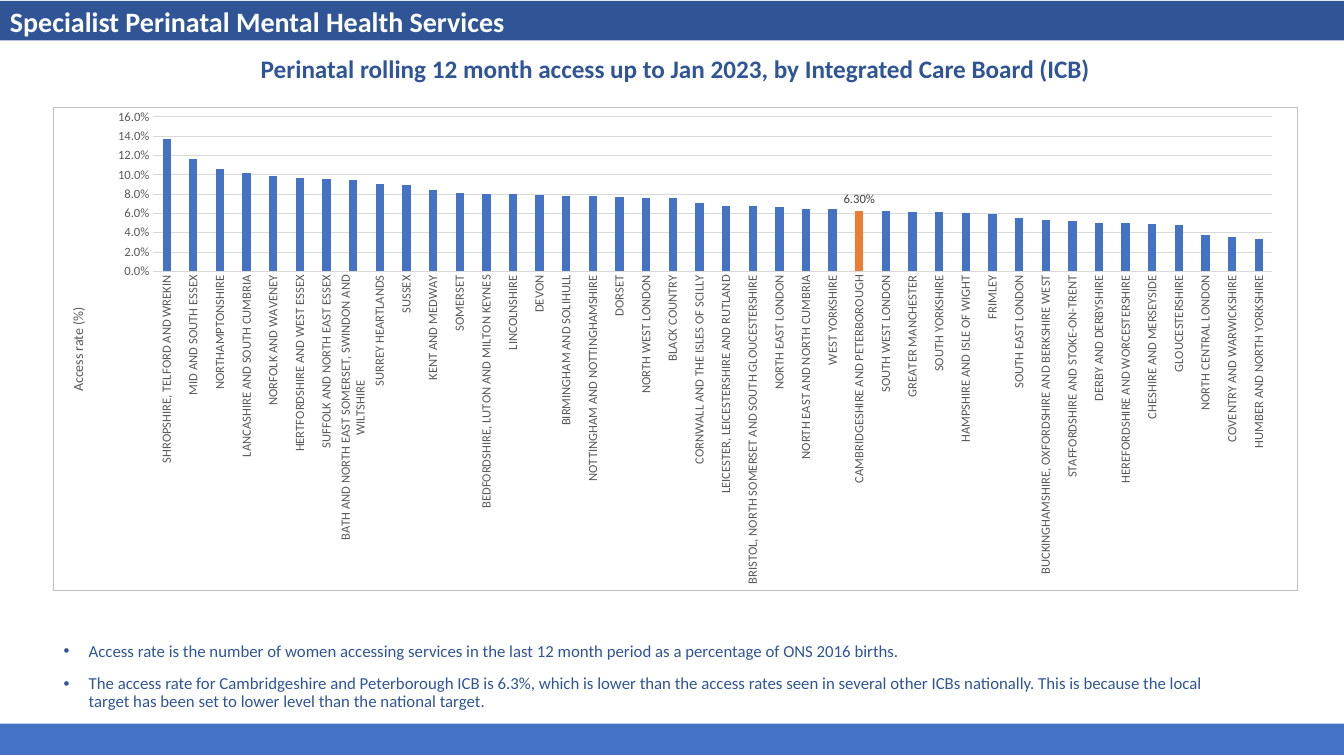
from lxml import etree
from pptx import Presentation
from pptx import util as u
from pptx.chart.data import CategoryChartData
from pptx.dml.color import RGBColor
from pptx.enum import chart as ch, shapes, text
from pptx.oxml import parse_xml
from pptx.oxml.ns import nsdecls, qn

W, H = 13.33, 7.5
MARGIN = 0.53
FONT = "Calibri"
COLORS = {"navy": "2F5597", "blue": "4472C4", "orange": "ED7D31", "white": "FFFFFF",
          "grey": "595959", "grid": "D9D9D9", "border": "BFBFBF", "dark": "404040"}
HIGHLIGHT = "CAMBRIDGESHIRE AND PETERBOROUGH"
ACCESS_RATES = [
    ("SHROPSHIRE, TELFORD AND WREKIN", 0.137), ("MID AND SOUTH ESSEX", 0.116),
    ("NORTHAMPTONSHIRE", 0.106), ("LANCASHIRE AND SOUTH CUMBRIA", 0.102),
    ("NORFOLK AND WAVENEY", 0.099), ("HERTFORDSHIRE AND WEST ESSEX", 0.097),
    ("SUFFOLK AND NORTH EAST ESSEX", 0.096),
    ("BATH AND NORTH EAST SOMERSET, SWINDON AND\nWILTSHIRE", 0.095),
    ("SURREY HEARTLANDS", 0.091), ("SUSSEX", 0.09), ("KENT AND MEDWAY", 0.084),
    ("SOMERSET", 0.081), ("BEDFORDSHIRE, LUTON AND MILTON KEYNES", 0.08),
    ("LINCOLNSHIRE", 0.08), ("DEVON", 0.079), ("BIRMINGHAM AND SOLIHULL", 0.078),
    ("NOTTINGHAM AND NOTTINGHAMSHIRE", 0.078), ("DORSET", 0.077),
    ("NORTH WEST LONDON", 0.076), ("BLACK COUNTRY", 0.076),
    ("CORNWALL AND THE ISLES OF SCILLY", 0.071),
    ("LEICESTER, LEICESTERSHIRE AND RUTLAND", 0.068),
    ("BRISTOL, NORTH SOMERSET AND SOUTH GLOUCESTERSHIRE", 0.068),
    ("NORTH EAST LONDON", 0.067), ("NORTH EAST AND NORTH CUMBRIA", 0.065),
    ("WEST YORKSHIRE", 0.065), (HIGHLIGHT, 0.063), ("SOUTH WEST LONDON", 0.063),
    ("GREATER MANCHESTER", 0.062), ("SOUTH YORKSHIRE", 0.062),
    ("HAMPSHIRE AND ISLE OF WIGHT", 0.061), ("FRIMLEY", 0.06),
    ("SOUTH EAST LONDON", 0.055),
    ("BUCKINGHAMSHIRE, OXFORDSHIRE AND BERKSHIRE WEST", 0.053),
    ("STAFFORDSHIRE AND STOKE-ON-TRENT", 0.052), ("DERBY AND DERBYSHIRE", 0.05),
    ("HEREFORDSHIRE AND WORCESTERSHIRE", 0.05), ("CHESHIRE AND MERSEYSIDE", 0.049),
    ("GLOUCESTERSHIRE", 0.048), ("NORTH CENTRAL LONDON", 0.038),
    ("COVENTRY AND WARWICKSHIRE", 0.036), ("HUMBER AND NORTH YORKSHIRE", 0.034)]
NOTES = [
    "Access rate is the number of women accessing services in the last 12 month period "
    "as a percentage of ONS 2016 births.",
    "The access rate for Cambridgeshire and Peterborough ICB is 6.3%, which is lower than "
    "the access rates seen in several other ICBs nationally. This is because the local "
    "target has been set to lower level than the national target."]


def rgb(name):
    return RGBColor.from_string(COLORS[name])


def inches(box):
    return [u.Inches(v) for v in box]


def style_font(font, size, color, bold=False):
    font.name, font.size, font.bold = FONT, u.Pt(size), bold
    font.color.rgb = rgb(color)


def style_line(line, color):
    line.color.rgb = rgb(color)
    line.width = u.Pt(0.75)


def add_run(p, content, size, color, bold=False):
    r = p.add_run()
    r.text = content
    style_font(r.font, size, color, bold)


def place(sp, box):
    sp.left, sp.top, sp.width, sp.height = inches(box)


def add_band(s, box, color):
    sp = s.shapes.add_shape(shapes.MSO_SHAPE.RECTANGLE, *inches(box))
    sp.shadow.inherit = False
    sp.fill.solid()
    sp.fill.fore_color.rgb = rgb(color)
    sp.line.fill.background()


def add_heading(s, box):
    tf = s.shapes.add_textbox(*inches(box)).text_frame
    tf.word_wrap = False
    add_run(tf.paragraphs[0], "Specialist Perinatal Mental Health Services", 20, "white", True)


def fill_title(s, box):
    sp = s.shapes.title
    place(sp, box)
    tf = sp.text_frame
    tf.auto_size = text.MSO_AUTO_SIZE.NONE
    tf.vertical_anchor = text.MSO_ANCHOR.MIDDLE
    p = tf.paragraphs[0]
    p.alignment, p.line_spacing = text.PP_ALIGN.CENTER, 0.9
    add_run(p, "Perinatal rolling 12 month access up to Jan 2023, by Integrated Care Board (ICB)",
            18, "navy", True)


def fill_notes(s, box):
    sp = s.placeholders[1]
    place(sp, box)
    tf = sp.text_frame
    tf.auto_size = text.MSO_AUTO_SIZE.NONE
    for i, note in enumerate(NOTES):
        p = tf.add_paragraph() if i else tf.paragraphs[0]
        p.line_spacing, p.space_before = 0.9, u.Pt(10)
        pPr = p._p.get_or_add_pPr()
        pPr.set("marL", str(u.Inches(0.25)))
        pPr.set("indent", str(-u.Inches(0.25)))
        etree.SubElement(pPr, qn("a:buFont"), typeface="Arial")
        etree.SubElement(pPr, qn("a:buChar"), char="•")
        add_run(p, note, 12, "navy")


def layout_xml(inner=False, **shares):
    target = '<c:layoutTarget val="inner"/>' if inner else ""
    modes = "".join(f'<c:{k}Mode val="edge"/>' for k in "xy")
    values = "".join(f'<c:{k} val="{v}"/>' for k, v in shares.items())
    return parse_xml(f'<c:layout {nsdecls("c")}><c:manualLayout>{target}{modes}{values}'
                     '</c:manualLayout></c:layout>')


def set_layout(parent, after, layout):
    for old in parent.findall(qn("c:layout")):
        parent.remove(old)
    if after is None:
        parent.insert(0, layout)
    else:
        after.addnext(layout)


def style_axes(chart):
    cat, val = chart.category_axis, chart.value_axis
    for axis in (cat, val):
        axis.major_tick_mark = axis.minor_tick_mark = ch.XL_TICK_MARK.NONE
        style_font(axis.tick_labels.font, 9, "grey")
    style_line(cat.format.line, "grid")
    cat._element.find(qn("c:txPr")).find(qn("a:bodyPr")).attrib.update(
        {"rot": "-5400000", "vert": "horz"})
    val.minimum_scale, val.maximum_scale, val.major_unit = 0, 0.16, 0.02
    val.tick_labels.number_format = "0.0%"
    val.tick_labels.number_format_is_linked = False
    val.format.line.fill.background()
    style_line(val.major_gridlines.format.line, "grid")
    tf = val.axis_title.text_frame
    add_run(tf.paragraphs[0], "Access rate (%)", 10, "grey")
    tf._txBody.find(qn("a:bodyPr")).attrib.update({"rot": "-5400000", "vert": "horz"})
    title = val.axis_title._element
    set_layout(title, title.find(qn("c:tx")), layout_xml(x=0.01, y=0.41))


def add_access_chart(s, box):
    data = CategoryChartData(number_format="0.0%")
    data.categories = [name for name, _ in ACCESS_RATES]
    data.add_series("Access rate", [rate for _, rate in ACCESS_RATES])
    chart = s.shapes.add_chart(ch.XL_CHART_TYPE.COLUMN_CLUSTERED, *inches(box), data).chart
    chart.has_legend = chart.has_title = False
    style_font(chart.font, 10, "dark")
    style_axes(chart)
    plot = chart.plots[0]
    plot.gap_width, plot.overlap, plot.vary_by_categories = 219, -27, False
    series = plot.series[0]
    series.format.fill.solid()
    series.format.fill.fore_color.rgb = rgb("blue")
    point = series.points[[name for name, _ in ACCESS_RATES].index(HIGHLIGHT)]
    point.format.fill.solid()
    point.format.fill.fore_color.rgb = rgb("orange")
    label = point.data_label
    label.position = ch.XL_LABEL_POSITION.OUTSIDE_END
    style_font(label.font, 9, "dark")
    dLbl = series._element.find(".//" + qn("c:dLbl"))
    dLbl.find(qn("c:idx")).addnext(parse_xml(
        f'<c:numFmt {nsdecls("c")} formatCode="0.00%" sourceLinked="0"/>'))
    root = chart._chartSpace.find(qn("c:chart"))
    set_layout(root.find(qn("c:plotArea")), None,
               layout_xml(True, x=0.08, y=0.02, w=0.9, h=0.32))
    root.addnext(parse_xml(
        f'<c:spPr {nsdecls("c", "a")}><a:noFill/><a:ln w="{u.Pt(0.75)}"><a:solidFill>'
        f'<a:srgbClr val="{COLORS["border"]}"/></a:solidFill></a:ln></c:spPr>'))


def build_slide(prs):
    s = prs.slides.add_slide(prs.slide_layouts[1])
    add_band(s, (0, 0.01, W, 0.39), "navy")
    add_band(s, (0, 7.18, W, 0.31), "blue")
    fill_title(s, (0.1, 0.46, 13.2, 0.48))
    fill_notes(s, (MARGIN, 6.33, 11.83, 0.83))
    add_access_chart(s, (MARGIN, 1.06, 12.34, 4.8))
    add_heading(s, (0, 0, 5.15, 0.44))


def main():
    prs = Presentation()
    prs.slide_width, prs.slide_height = inches((W, H))
    build_slide(prs)
    prs.save("out.pptx")


if __name__ == "__main__":
    main()
